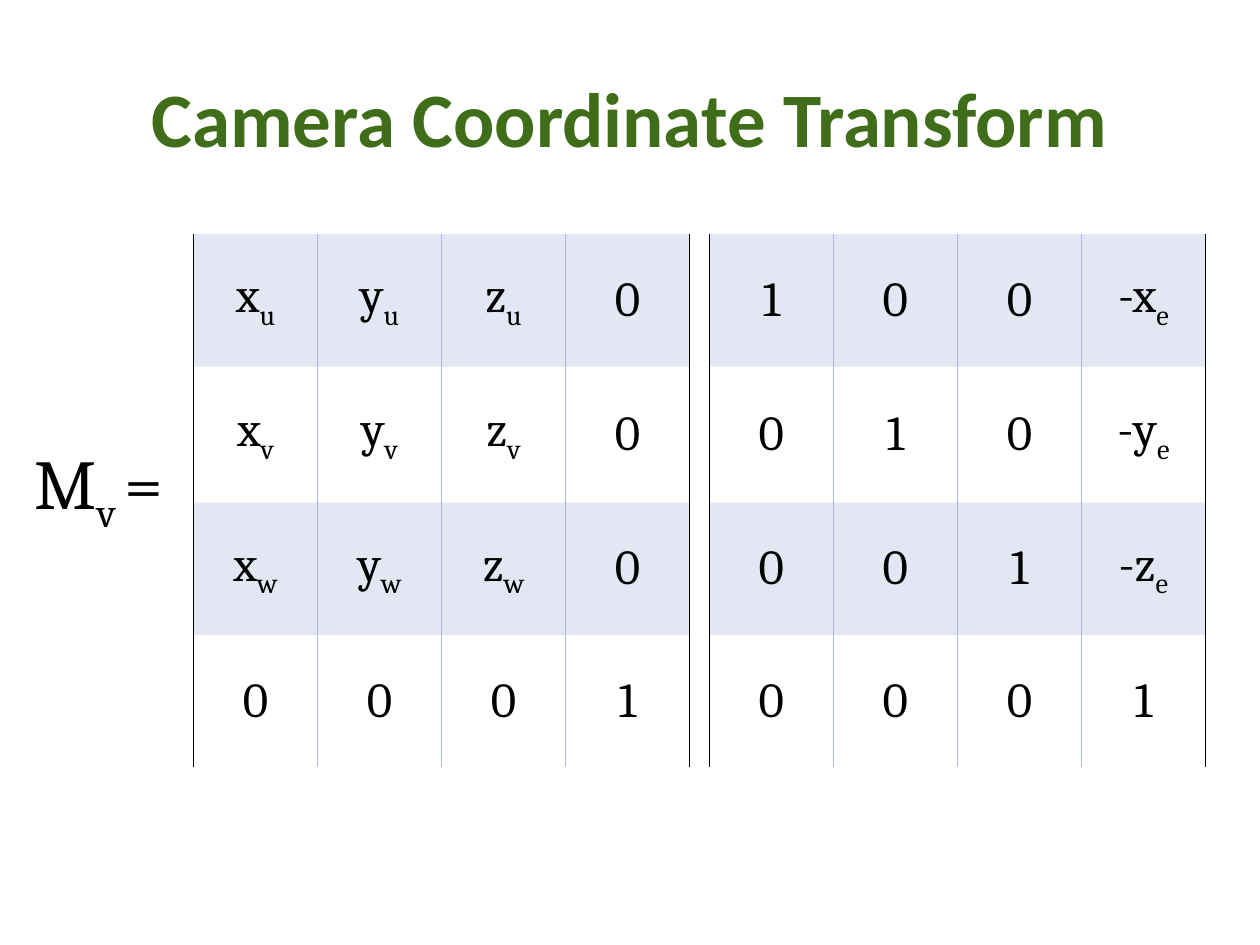
import dataclasses

import lxml.etree
import pptx
import pptx.dml.color
import pptx.enum.text
import pptx.oxml.ns
import pptx.util

Cm = pptx.util.Cm
Pt = pptx.util.Pt
RGB = pptx.dml.color.RGBColor.from_string
Align = pptx.enum.text.PP_ALIGN
Anchor = pptx.enum.text.MSO_ANCHOR
qn = pptx.oxml.ns.qn

NO_STYLE_NO_GRID = "{2D5ABB26-0587-4C30-8999-92F81FD0307C}"


@dataclasses.dataclass(frozen=True)
class Theme:
    title_font: str = "Calibri"
    math_font: str = "Cambria"
    title_size: int = 44
    symbol_size: int = 40
    cell_size: int = 28
    title_color: str = "3F6D19"
    ink: str = "000000"
    band: str = "738AC8"
    band_opacity: int = 20
    grid: str = "ABB9DE"


THEME = Theme()

# An underscore switches between the base line and the subscript
ROTATION = [
    ["x_u", "y_u", "z_u", "0"],
    ["x_v", "y_v", "z_v", "0"],
    ["x_w", "y_w", "z_w", "0"],
    ["0", "0", "0", "1"],
]
TRANSLATION = [
    ["1", "0", "0", "-x_e"],
    ["0", "1", "0", "-y_e"],
    ["0", "0", "1", "-z_e"],
    ["0", "0", "0", "1"],
]
ROW_HEIGHTS = [2.67, 2.74, 2.67, 2.67]


def style_font(para, name, size, color):
    para.font.name = name
    para.font.size = Pt(size)
    para.font.color.rgb = RGB(color)


def write_math(para, notation, size, align):
    para.alignment = align
    style_font(para, THEME.math_font, size, THEME.ink)
    for index, part in enumerate(notation.split("_")):
        span = para.add_run()
        span.text = part
        if index % 2:
            span.font._element.set("baseline", "-25000")


def place(shape, left, top, width, height):
    shape.left, shape.top = Cm(left), Cm(top)
    shape.width, shape.height = Cm(width), Cm(height)


def add_title(page, text, *box):
    title = page.shapes.title
    place(title, *box)
    frame = title.text_frame
    frame.text = text
    frame.vertical_anchor = Anchor.MIDDLE
    para = frame.paragraphs[0]
    para.alignment = Align.CENTER
    para.font.bold = True
    style_font(para, THEME.title_font, THEME.title_size, THEME.title_color)


def add_symbol(page, notation, *box):
    symbol = page.shapes.add_textbox(*map(Cm, box))
    frame = symbol.text_frame
    frame.word_wrap = False
    frame.auto_size = pptx.enum.text.MSO_AUTO_SIZE.SHAPE_TO_FIT_TEXT
    write_math(frame.paragraphs[0], notation, THEME.symbol_size, Align.RIGHT)


def add_side_borders(cell, left_color, right_color):
    properties = cell._tc.get_or_add_tcPr()
    for index, (side, color) in enumerate((("lnL", left_color), ("lnR", right_color))):
        line = lxml.etree.Element(qn(f"a:{side}"), w=str(Pt(1)))
        fill = lxml.etree.SubElement(line, qn("a:solidFill"))
        lxml.etree.SubElement(fill, qn("a:srgbClr"), val=color)
        properties.insert(index, line)


def fill_cell(cell, banded):
    if not banded:
        cell.fill.background()
        return
    cell.fill.solid()
    cell.fill.fore_color.rgb = RGB(THEME.band)
    color = cell._tc.tcPr.find(".//" + qn("a:srgbClr"))
    lxml.etree.SubElement(color, qn("a:alpha"), val=str(THEME.band_opacity * 1000))


def add_matrix(page, values, left, top, width):
    last = len(values[0]) - 1
    frame = page.shapes.add_table(len(values), last + 1, Cm(left), Cm(top),
                                  Cm(width), Cm(sum(ROW_HEIGHTS)))
    table = frame.table
    table.first_row = table.horz_banding = False
    table._tbl.tblPr.find(qn("a:tableStyleId")).text = NO_STYLE_NO_GRID
    for row, height in zip(table.rows, ROW_HEIGHTS):
        row.height = Cm(height)
    for r, entries in enumerate(values):
        for c, notation in enumerate(entries):
            cell = table.cell(r, c)
            cell.vertical_anchor = Anchor.MIDDLE
            write_math(cell.text_frame.paragraphs[0], notation,
                       THEME.cell_size, Align.CENTER)
            fill_cell(cell, banded=r % 2 == 0)
            # Dark outer sides stand for the matrix brackets
            add_side_borders(cell, THEME.ink if c == 0 else THEME.grid,
                             THEME.ink if c == last else THEME.grid)


def main():
    deck = pptx.Presentation()
    deck.slide_width, deck.slide_height = Cm(25.4), Cm(19.05)
    page = deck.slides.add_slide(deck.slide_layouts.get_by_name("Title Only"))

    add_title(page, "Camera Coordinate Transform", 1.27, 0.76, 22.86, 3.18)
    add_symbol(page, "M_v _=", 0.4, 8.74, 3.15, 1.96)
    add_matrix(page, TRANSLATION, 14.3, 4.72, 10)
    add_matrix(page, ROTATION, 3.9, 4.72, 10)

    deck.save("out.pptx")


if __name__ == "__main__":
    main()
